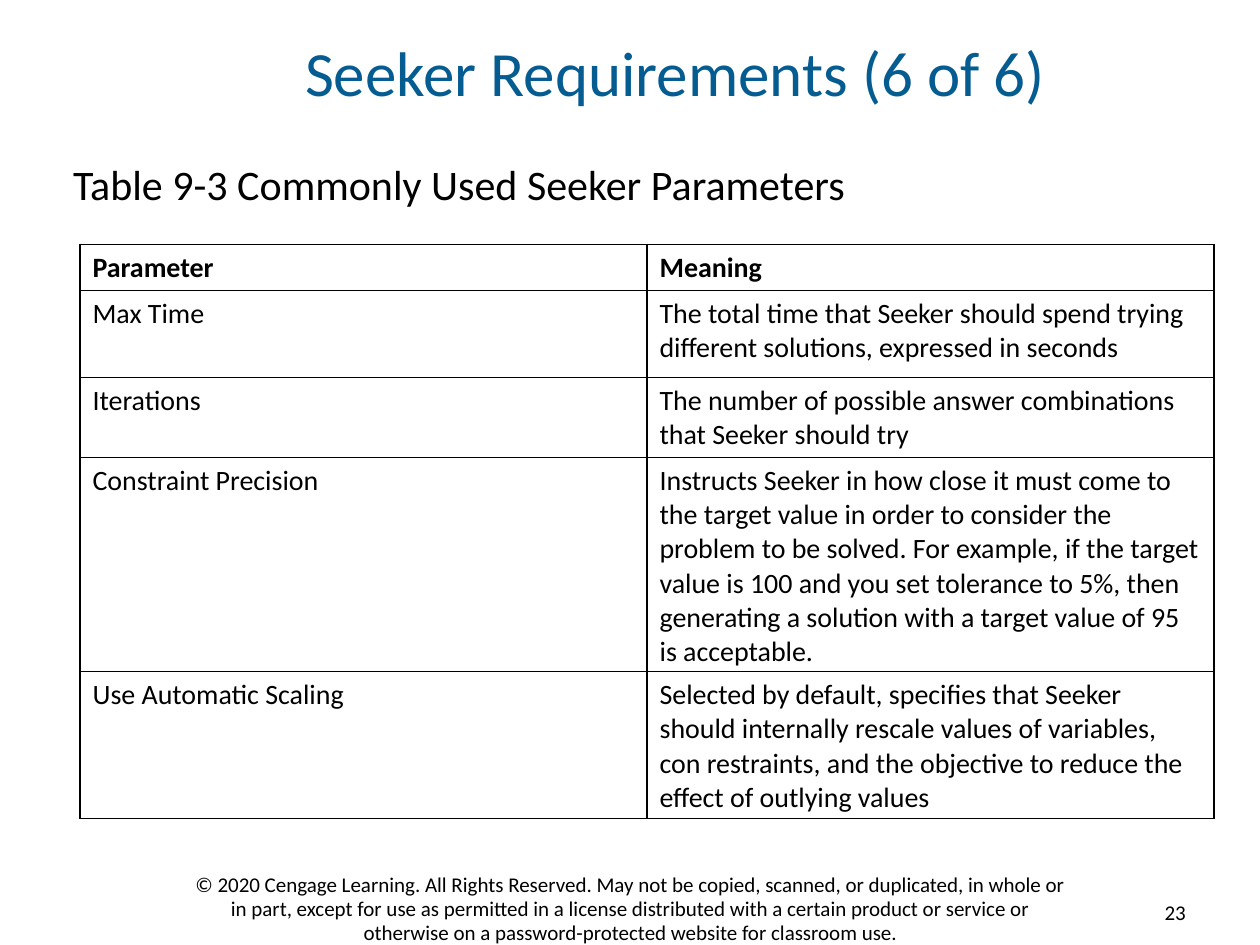
from dataclasses import dataclass

from lxml.etree import SubElement
from pptx import Presentation
from pptx.dml.color import RGBColor
from pptx.enum.text import MSO_ANCHOR as Anchor, PP_ALIGN as Align
from pptx.oxml.ns import qn
from pptx.util import Inches, Length, Pt

COLUMNS, ROWS = 100, 75
FONT = "Calibri"
BLACK, BLUE = "000000", "055C91"


@dataclass(frozen=True)
class Area:
    column: float
    row: float
    columns: float
    rows: float


@dataclass(frozen=True)
class Label:
    text: str
    area: Area
    size: int
    color: str = BLACK
    align: Align = Align.LEFT
    anchor: Anchor = Anchor.TOP
    spacing: float = 1.0
    inset: bool = False
    wrap: bool = True


@dataclass(frozen=True)
class Parameter:
    name: str
    meaning: str
    rows: float


LABELS = (
    Label("Seeker Requirements (6 of 6)", Area(8.3, 1.5, 90.6, 9.3), 36, BLUE,
          Align.CENTER, Anchor.MIDDLE, 0.85),
    Label("Table 9-3 Commonly Used Seeker Parameters",
          Area(5.8, 12.9, 61.6, 3.7), 24, spacing=0.95, wrap=False),
    Label("© 2020 Cengage Learning. All Rights Reserved. May not be copied, scanned, "
          "or duplicated, in whole or in part, except for use as permitted in a license "
          "distributed with a certain product or service or otherwise on a "
          "password-protected website for classroom use.",
          Area(14.2, 68.8, 71.7, 6), 12, align=Align.CENTER, spacing=0.95, inset=True),
    Label("23", Area(91, 70.9, 4.1, 3), 12, align=Align.RIGHT,
          anchor=Anchor.MIDDLE, inset=True, wrap=False),
)

TABLE_AREA = Area(6.35, 19.4, 90, 36.7)
PARAMETERS = (
    Parameter("Parameter", "Meaning", 2.8),
    Parameter("Max Time", "The total time that Seeker should spend trying different "
              "solutions, expressed in seconds", 6.9),
    Parameter("Iterations", "The number of possible answer combinations that Seeker "
              "should try", 4.8),
    Parameter("Constraint Precision", "Instructs Seeker in how close it must come to the "
              "target value in order to consider the problem to be solved. For example, "
              "if the target value is 100 and you set tolerance to 5%, then generating a "
              "solution with a target value of 95 is acceptable.", 13.2),
    Parameter("Use Automatic Scaling", "Selected by default, specifies that Seeker should "
              "internally rescale values of variables, con restraints, and the objective "
              "to reduce the effect of outlying values", 9),
)

deck = Presentation()
deck.slide_width, deck.slide_height = Inches(10), Inches(7.5)
page = deck.slides.add_slide(deck.slide_layouts[6])


def across(columns: float) -> Length:
    return Length(round(deck.slide_width * columns / COLUMNS))


def down(rows: float) -> Length:
    return Length(round(deck.slide_height * rows / ROWS))


def place(area: Area) -> tuple[Length, ...]:
    return across(area.column), down(area.row), across(area.columns), down(area.rows)


def rgb(color: str) -> RGBColor:
    return RGBColor.from_string(color)


def style(para, size: int, color: str = BLACK, bold: bool = False) -> None:
    para.font.name = FONT
    para.font.size = Pt(size)
    para.font.bold = bold
    para.font.color.rgb = rgb(color)


def draw_label(label: Label) -> None:
    frame = page.shapes.add_textbox(*place(label.area)).text_frame
    frame.word_wrap = label.wrap
    frame.vertical_anchor = label.anchor
    if not label.inset:
        frame.margin_left = frame.margin_right = 0
        frame.margin_top = frame.margin_bottom = 0
    para = frame.paragraphs[0]
    para.text = label.text
    para.alignment = label.align
    para.line_spacing = label.spacing
    style(para, label.size, label.color)


def draw_borders(cell) -> None:
    properties = cell._tc.get_or_add_tcPr()
    for side in ("a:lnL", "a:lnR", "a:lnT", "a:lnB"):
        line = SubElement(properties, qn(side), w=str(Pt(1)))
        fill = SubElement(line, qn("a:solidFill"))
        SubElement(fill, qn("a:srgbClr"), val=BLACK)


def draw_table(parameters: tuple[Parameter, ...], area: Area) -> None:
    table = page.shapes.add_table(len(parameters), 2, *place(area)).table
    table.horz_banding = False
    for index, parameter in enumerate(parameters):
        table.rows[index].height = down(parameter.rows)
        for column, text in enumerate((parameter.name, parameter.meaning)):
            cell = table.cell(index, column)
            cell.text = text
            style(cell.text_frame.paragraphs[0], 16, bold=index == 0)
            draw_borders(cell)
            cell.fill.background()


for label in LABELS:
    draw_label(label)
draw_table(PARAMETERS, TABLE_AREA)
deck.save("out.pptx")
